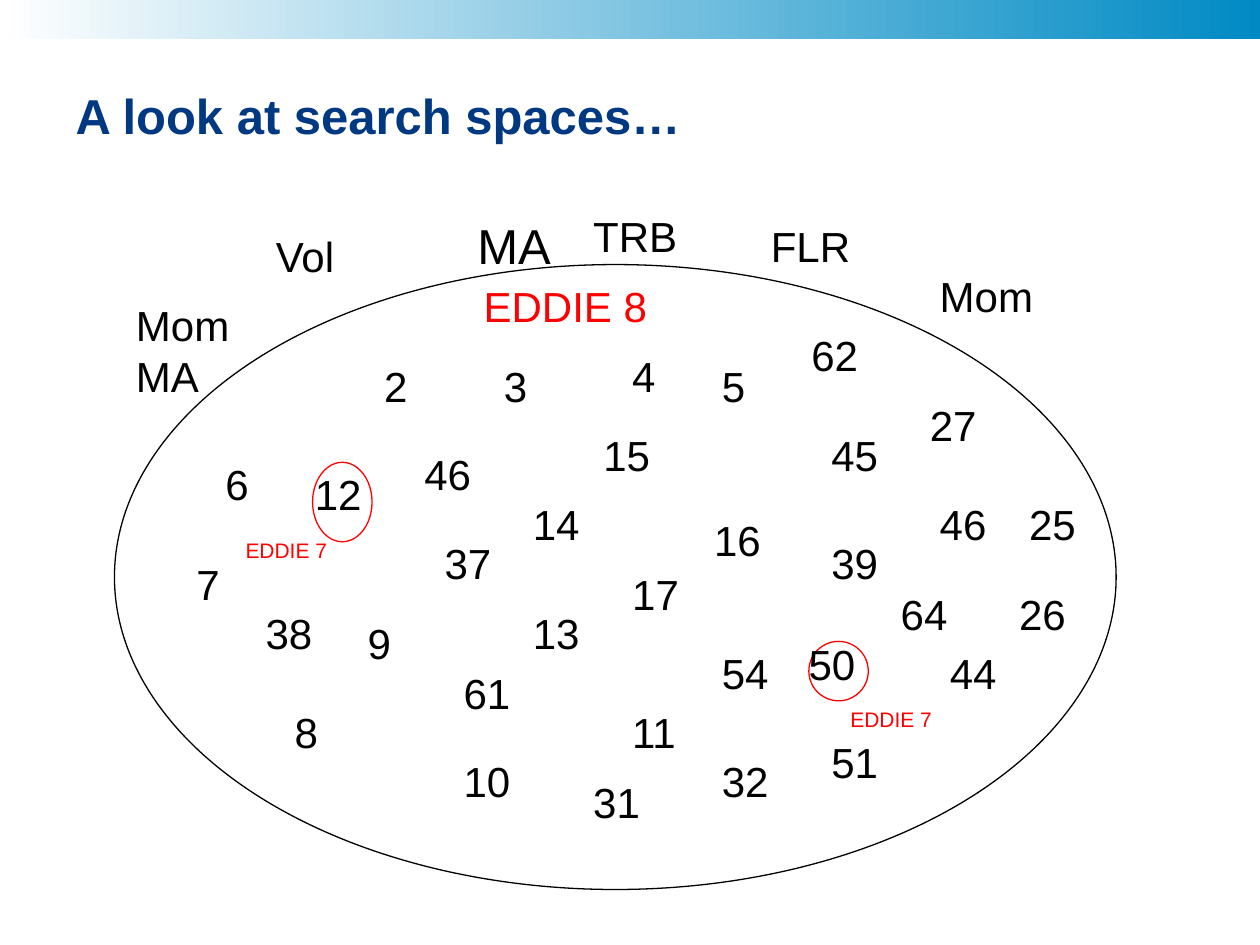
from pptx import Presentation
from pptx.dml.color import RGBColor
from pptx.enum.shapes import MSO_SHAPE
from pptx.enum.text import MSO_ANCHOR, PP_ALIGN
from pptx.util import Pt

RECTANGLE, OVAL = MSO_SHAPE.RECTANGLE, MSO_SHAPE.OVAL
MIDDLE, LEFT = MSO_ANCHOR.MIDDLE, PP_ALIGN.LEFT
FONT = "Arial"
BLACK, RED, NAVY, WHITE, BLUE = "000000", "FF0000", "003882", "FFFFFF", "008AC4"

# Content: lengths in points
TITLE = "A look at search spaces…"

# Number, left, top
NUMBERS = [
    (12, 172.8, 264.2), (50, 455, 361.4), (2, 212.4, 202.3), (3, 280.8, 202.3),
    (5, 405.4, 202.3), (45, 468, 241.9), (15, 337.7, 241.9), (11, 354.2, 400.3),
    (13, 297.4, 343.4), (25, 581, 281.5), (44, 535.7, 366.5), (14, 297.4, 281.5),
    (9, 203, 349.2), (4, 354.2, 196.6), (16, 401, 290.2), (8, 161.3, 400.3),
    (6, 121.7, 258.5), (17, 354.2, 321.1), (46, 529.9, 281.5), (39, 468, 303.8),
    (51, 468, 417.6), (10, 257.8, 428.4), (32, 405.4, 428.4), (7, 105.1, 315.4),
    (31, 331.9, 439.9), (37, 247, 303.8), (54, 405.4, 366.5), (61, 257.8, 378),
    (46, 235.4, 252.7), (38, 144.7, 343.4), (26, 575.3, 332.6), (64, 507.6, 332.6),
    (62, 456.5, 185), (27, 524.2, 224.6),
]

# Text, left, top, width, size, colour
LABELS = [
    ("MA", 265.7, 119.5, 70, 28, BLACK),
    ("EDDIE 7", 133.2, 303.8, 68, 12, RED),
    ("EDDIE 7", 478.8, 400.3, 68, 12, RED),
    ("EDDIE 8", 269.3, 157, 148, 24, RED),
    ("TRB", 331.9, 116.6, 68, 24, BLACK),
    ("Vol", 150.5, 128.2, 68, 24, BLACK),
    ("Mom\vMA", 70.6, 167.8, 68, 24, BLACK),
    ("Mom", 529.9, 151.2, 68, 24, BLACK),
    ("FLR", 433.4, 122.4, 68, 24, BLACK),
]

# Left, top, width, height, line colour
OVALS = [
    (65.4, 151.2, 572.4, 357.1, BLACK),
    (178.6, 264.2, 34, 45.4, RED),
    (462.2, 366.5, 34, 34, RED),
]


def colour(value):
    return RGBColor.from_string(value)


def style_text(frame, size, value, bold=False):
    for para in frame.paragraphs:
        para.alignment = LEFT
        for span in para.runs:
            font = span.font
            font.name, font.size, font.bold = FONT, Pt(size), bold
            font.color.rgb = colour(value)


def add_label(page, text, left, top, width, size, value, wrap=True):
    height = 7.2 + 1.2 * size * len(text.split("\v"))
    box = page.shapes.add_textbox(Pt(left), Pt(top), Pt(width), Pt(height))
    box.text_frame.word_wrap = wrap
    box.text_frame.text = text
    style_text(box.text_frame, size, value)


deck = Presentation()
deck.slide_width, deck.slide_height = Pt(720), Pt(540)
page = deck.slides.add_slide(deck.slide_layouts[5])

# Gradient band across the top
band = page.shapes.add_shape(RECTANGLE, 0, 0, deck.slide_width, Pt(22.3))
band.shadow.inherit = False
band.line.fill.background()
band.fill.gradient()
band.fill.gradient_angle = 0
for stop, value in zip(band.fill.gradient_stops, (WHITE, BLUE)):
    stop.color.rgb = colour(value)

# Title
title = page.shapes.title
title.left, title.top, title.width, title.height = Pt(36), Pt(43.2), Pt(653), Pt(45.4)
title.text_frame.text = TITLE
title.text_frame.vertical_anchor = MIDDLE
style_text(title.text_frame, 28, NAVY, bold=True)

# Search space and the circled numbers
for left, top, width, height, value in OVALS:
    oval = page.shapes.add_shape(OVAL, Pt(left), Pt(top), Pt(width), Pt(height))
    oval.shadow.inherit = False
    oval.fill.background()
    oval.line.color.rgb = colour(value)
    oval.line.width = Pt(0.75)

# Numbers: box width follows the digit count
for number, left, top in NUMBERS:
    text = str(number)
    add_label(page, text, left, top, 14.4 + 13.5 * len(text), 24, BLACK, wrap=False)

# Names and heuristics
for label in LABELS:
    add_label(page, *label)

deck.save("out.pptx")
